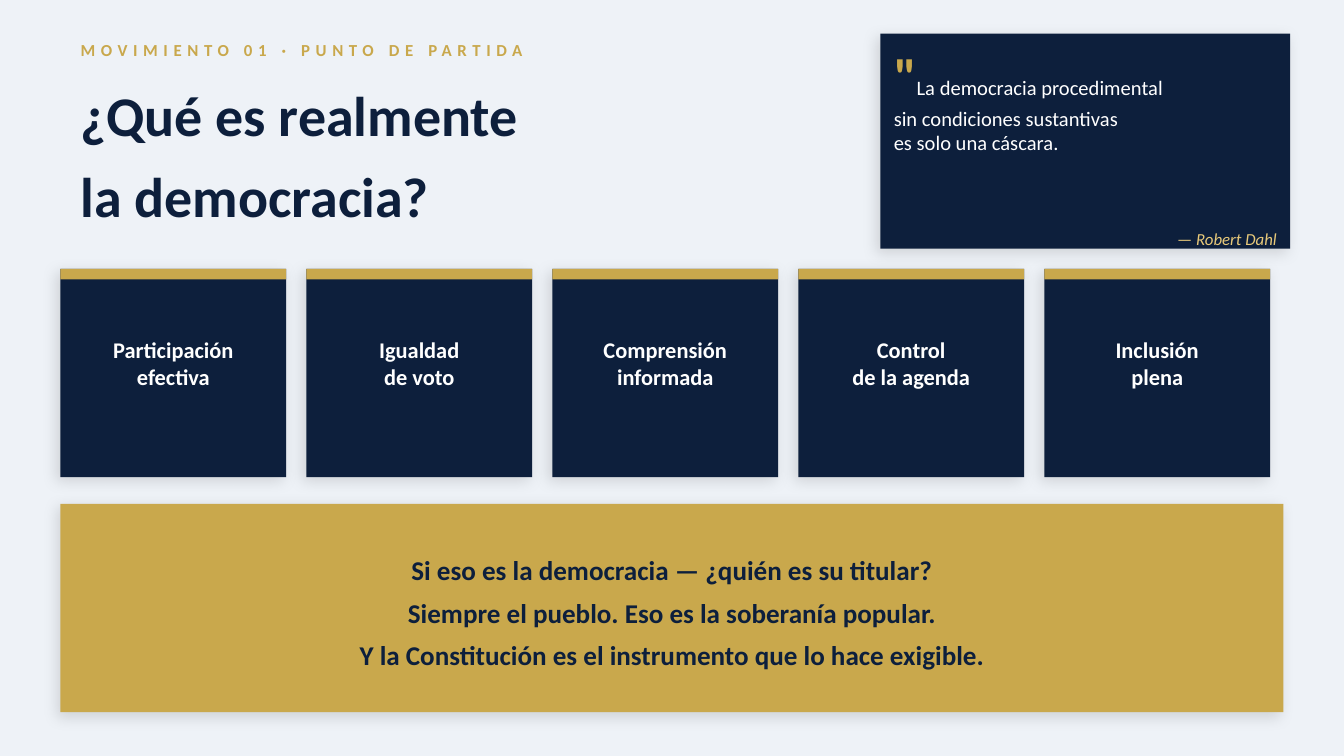
import pptx
import pptx.util
import pptx.dml.color
import pptx.enum.shapes
import pptx.enum.text
import pptx.oxml
import pptx.oxml.ns

Inches = pptx.util.Inches
ALIGN = pptx.enum.text.PP_ALIGN
ANCHOR = pptx.enum.text.MSO_ANCHOR

KICKER = "MOVIMIENTO 01 · PUNTO DE PARTIDA"
TITLE = "¿Qué es realmente\nla democracia?"
MARK = '"'
QUOTE = ["La democracia procedimental", "sin condiciones sustantivas", "es solo una cáscara."]
AUTHOR = "— Robert Dahl"
CARDS = [
    "Participación\nefectiva",
    "Igualdad\nde voto",
    "Comprensión\ninformada",
    "Control\nde la agenda",
    "Inclusión\nplena",
]
CLOSING = """Si eso es la democracia — ¿quién es su titular?
Siempre el pueblo. Eso es la soberanía popular.
Y la Constitución es el instrumento que lo hace exigible."""

COLORS = {"back": "EEF2F7", "navy": "0D1F3C", "gold": "C9A84C", "pale": "E8C97A", "white": "FFFFFF"}
FONT = "Calibri"
WIDTH = 10
HEIGHT = WIDTH * 9 / 16
LEFT, TOP = 0.45, 2
CARD_W, CARD_H, GAP, PAD = 1.68, 1.55, 0.15, 0.08

SHADOW = f"""<a:effectLst {pptx.oxml.ns.nsdecls("a")}>
<a:outerShdw blurRad="{pptx.util.Pt(8)}" dist="{pptx.util.Pt(3)}" dir="{135 * 60000}" algn="bl" rotWithShape="0">
<a:srgbClr val="000000"><a:alpha val="12000"/></a:srgbClr></a:outerShdw></a:effectLst>"""


def tone(name):
    return pptx.dml.color.RGBColor.from_string(COLORS[name])


def style(run, size, color, bold=False, italic=False):
    font = run.font
    font.name, font.size = FONT, pptx.util.Pt(size)
    font.bold, font.italic = bold, italic
    font.color.rgb = tone(color)


def fill_text(shape, text, size, color, bold=False, italic=False,
              align=ALIGN.LEFT, anchor=ANCHOR.MIDDLE, spacing=None):
    frame = shape.text_frame
    frame.text = text
    frame.word_wrap = True
    frame.auto_size = pptx.enum.text.MSO_AUTO_SIZE.NONE
    frame.vertical_anchor = anchor
    frame.margin_left = frame.margin_right = frame.margin_top = frame.margin_bottom = 0
    for para in frame.paragraphs:
        para.alignment = align
        if spacing:
            para.line_spacing = spacing
        for run in para.runs:
            style(run, size, color, bold, italic)
    return frame


def add_text(slide, box, text, size, color, **look):
    shape = slide.shapes.add_textbox(*map(Inches, box))
    return fill_text(shape, text, size, color, **look)


def add_block(slide, box, color, shadow=True):
    kind = pptx.enum.shapes.MSO_SHAPE.RECTANGLE
    shape = slide.shapes.add_shape(kind, *map(Inches, box))
    shape.fill.solid()
    shape.fill.fore_color.rgb = tone(color)
    shape.line.fill.background()
    shape.shadow.inherit = False
    if shadow:
        props = shape._element.spPr
        props.remove(props.find(pptx.oxml.ns.qn("a:effectLst")))
        props.append(pptx.oxml.parse_xml(SHADOW))


def add_head(slide):
    frame = add_text(slide, (0.6, 0.22, 8.8, 0.3), KICKER, 9, "gold", bold=True)
    frame.paragraphs[0].runs[0].font._element.set("spc", "300")
    title = slide.shapes.title
    title.left, title.top, title.width, title.height = map(Inches, (0.6, 0.5, 5.8, 1.2))
    fill_text(title, TITLE, 30, "navy", bold=True, spacing=1.2)


def add_quote(slide):
    add_block(slide, (6.55, 0.25, 3.05, 1.6), "navy")
    frame = add_text(slide, (6.65, 0.32, 2.85, 1.45), "\n".join([MARK] + QUOTE[1:]),
                     11, "white", anchor=ANCHOR.TOP)
    first = frame.paragraphs[0]
    style(first.runs[0], 28, "gold", bold=True)
    run = first.add_run()
    run.text = QUOTE[0]
    style(run, 11, "white")
    add_text(slide, (6.65, 1.65, 2.85, 0.25), AUTHOR, 9, "pale", italic=True, align=ALIGN.RIGHT)


def add_cards(slide):
    for i, label in enumerate(CARDS):
        x = LEFT + i * (CARD_W + GAP)
        add_block(slide, (x, TOP, CARD_W, CARD_H), "navy")
        add_block(slide, (x, TOP, CARD_W, 0.08), "gold", shadow=False)
        add_text(slide, (x + PAD, TOP + 0.2, CARD_W - 2 * PAD, 1), label, 12, "white",
                 bold=True, align=ALIGN.CENTER)


def add_closing(slide):
    add_block(slide, (LEFT, 3.75, 9.1, 1.55), "gold")
    add_text(slide, (0.55, 3.82, 8.9, 1.4), CLOSING, 14.5, "navy",
             bold=True, align=ALIGN.CENTER, spacing=1.3)


def main():
    deck = pptx.Presentation()
    deck.slide_width, deck.slide_height = Inches(WIDTH), Inches(HEIGHT)
    slide = deck.slides.add_slide(deck.slide_layouts.get_by_name("Title Only"))
    slide.background.fill.solid()
    slide.background.fill.fore_color.rgb = tone("back")
    add_head(slide)
    add_quote(slide)
    add_cards(slide)
    add_closing(slide)
    deck.save("out.pptx")


if __name__ == "__main__":
    main()
